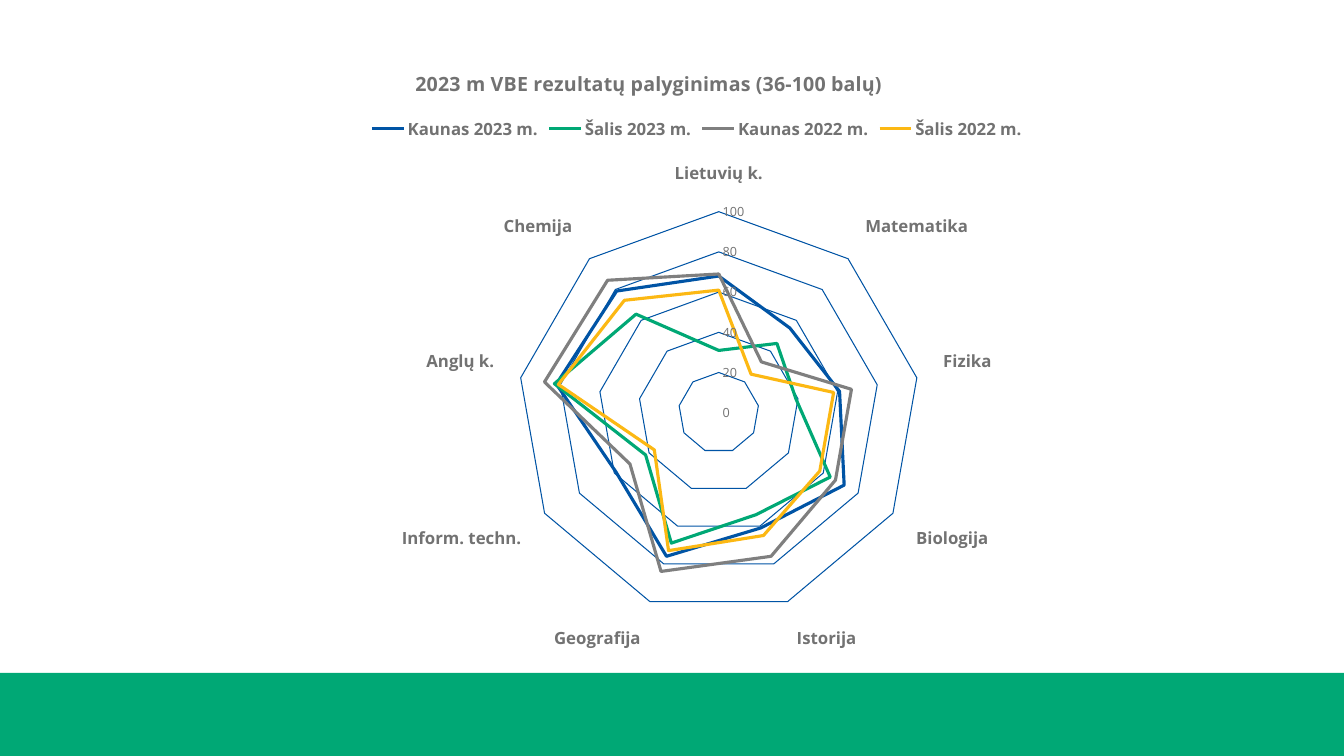
from lxml.etree import SubElement as Sub, QName
from pptx import Presentation
from pptx.chart.data import CategoryChartData as Data
from pptx.dml.color import RGBColor
from pptx.enum.chart import XL_CHART_TYPE as Kind, XL_LEGEND_POSITION as Spot
from pptx.enum.chart import XL_TICK_MARK as Tick
from pptx.enum.shapes import MSO_SHAPE as Form
from pptx.oxml.ns import qn
from pptx.util import Inches, Pt

BLUE = RGBColor(0x00, 0x54, 0xA5)
GREEN = RGBColor(0x00, 0xA8, 0x75)
GRAY = RGBColor(0x7F, 0x7F, 0x7F)
GOLD = RGBColor(0xFC, 0xB8, 0x13)
TEXT = RGBColor(0x72, 0x72, 0x72)
PALE = RGBColor(0xDE, 0xDE, 0xDE)

TOPICS = ["Lietuvių k.", "Matematika", "Fizika", "Biologija", "Istorija",
          "Geografija", "Inform. techn.", "Anglų k.", "Chemija"]
SCORES = [
    ("Kaunas 2023 m.", BLUE, [68, 55, 61, 72, 61, 76, 59, 82, 79]),
    ("Šalis 2023 m.", GREEN, [31, 45, 39, 64, 54, 69, 42, 83, 64]),
    ("Kaunas 2022 m.", GRAY, [69, 33, 67, 67, 76, 84, 51, 88, 86]),
    ("Šalis 2022 m.", GOLD, [61, 25, 58, 58, 65, 73, 37, 81, 73]),
]


class Page:
    face = "Open Sans"

    def __init__(self, deck):
        self.wide, self.high = deck.slide_width, deck.slide_height
        self.slide = deck.slides.add_slide(deck.slide_layouts[6])

    def area(self, x, y, w, h):
        return (int(x * self.wide), int(y * self.high),
                int(w * self.wide), int(h * self.high))

    def style(self, font, size, bold=False):
        font.name, font.size, font.bold = self.face, Pt(size), bold
        font.color.rgb = TEXT

    def stroke(self, line, color, width):
        line.color.rgb, line.width = color, Pt(width)

    def band(self, box, color):
        bar = self.slide.shapes.add_shape(Form.RECTANGLE, *self.area(*box))
        bar.shadow.inherit = False
        bar.fill.solid()
        bar.fill.fore_color.rgb = color
        bar.line.fill.background()

    def place(self, part, index, **shares):
        for old in part.findall(qn("c:layout")):
            part.remove(old)
        layout = part.makeelement(qn("c:layout"))
        part.insert(index, layout)
        manual = Sub(layout, qn("c:manualLayout"))
        if "w" in shares:
            Sub(manual, qn("c:layoutTarget")).set("val", "inner")
        for side in "xy":
            Sub(manual, QName(qn(f"c:{side}Mode"))).set("val", "edge")
        for side, share in shares.items():
            Sub(manual, qn(f"c:{side}")).set("val", str(share))

    def radar(self, box, title, topics, scores):
        data = Data()
        data.categories = topics
        for name, _, marks in scores:
            data.add_series(name, marks)
        chart = self.slide.shapes.add_chart(
            Kind.RADAR, *self.area(*box), data).chart
        self.style(chart.font, 10)
        plot = chart.plots[0]
        plot.vary_by_categories = False
        for line, (_, color, _) in zip(plot.series, scores):
            self.stroke(line.format.line, color, 2.25)

        chart.has_title = True
        frame = chart.chart_title.text_frame
        frame.text = title
        self.style(frame.paragraphs[0].runs[0].font, 14, True)
        chart.has_legend = True
        legend = chart.legend
        legend.position, legend.include_in_layout = Spot.TOP, False
        self.style(legend.font, 12, True)

        topic, scale = chart.category_axis, chart.value_axis
        for axis, size, bold in ((topic, 12, True), (scale, 9, False)):
            axis.major_tick_mark = axis.minor_tick_mark = Tick.NONE
            self.style(axis.tick_labels.font, size, bold)
            axis.tick_labels.number_format = "General"
            axis.tick_labels.number_format_is_linked = False
        topic.has_major_gridlines = False
        self.stroke(topic.format.line, PALE, 0.75)
        scale.minimum_scale, scale.maximum_scale = 0, 100
        scale.major_unit = 20
        scale.format.line.fill.background()
        scale.has_major_gridlines = True
        self.stroke(scale.major_gridlines.format.line, BLUE, 0.75)

        root = chart._chartSpace.chart
        self.place(root.find(qn("c:title")), 1, x=0.227, y=0.025)
        self.place(root.plotArea, 0, x=0.328, y=0.262, w=0.386, h=0.648)


def main():
    deck = Presentation()
    deck.slide_width, deck.slide_height = Inches(13.33), Inches(7.5)
    page = Page(deck)
    page.band((0, 0.89, 1, 0.11), GREEN)
    page.radar((0.13, 0.065, 0.777, 0.821),
               "2023 m VBE rezultatų palyginimas (36-100 balų)",
               TOPICS, SCORES)
    deck.save("out.pptx")


if __name__ == "__main__":
    main()
